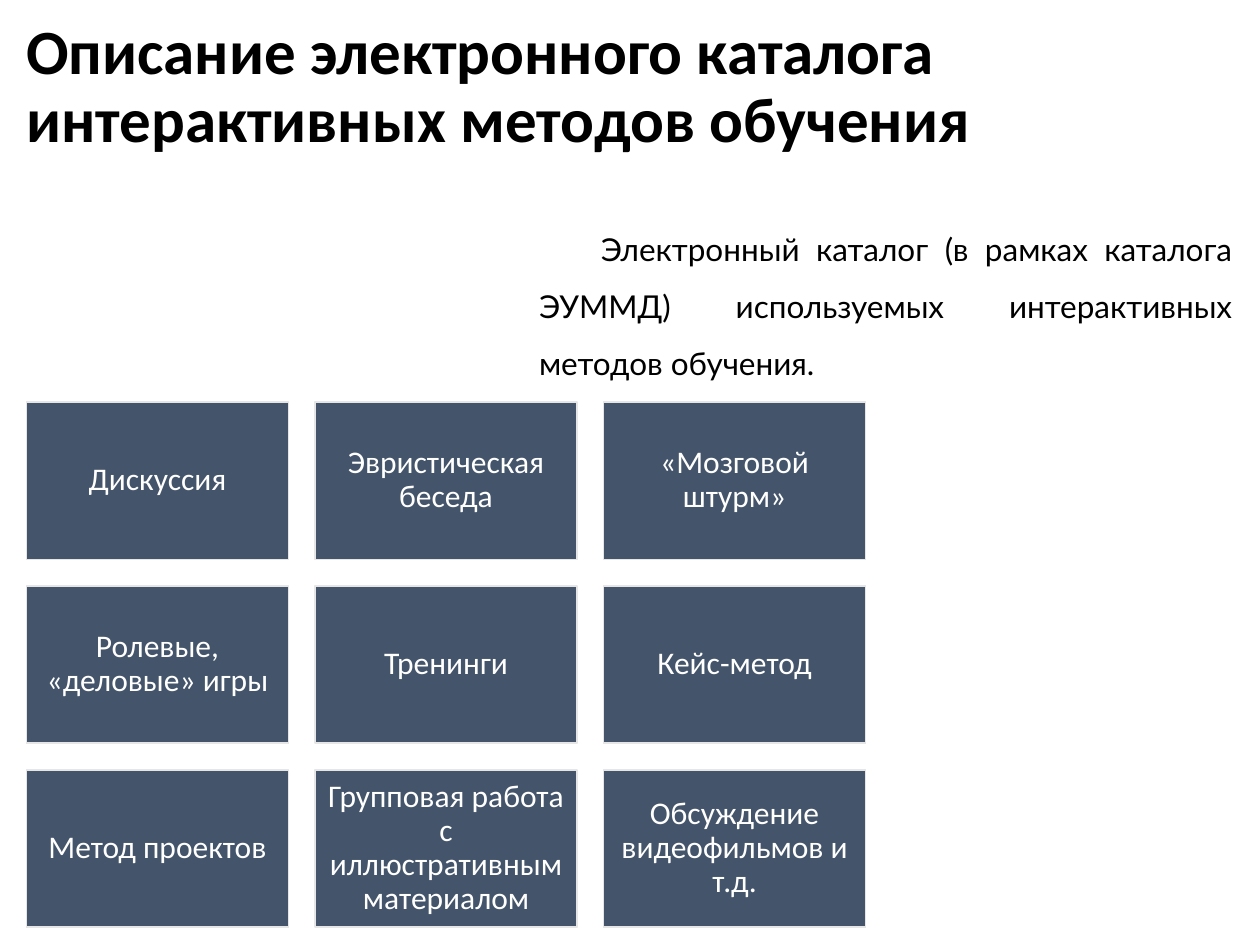
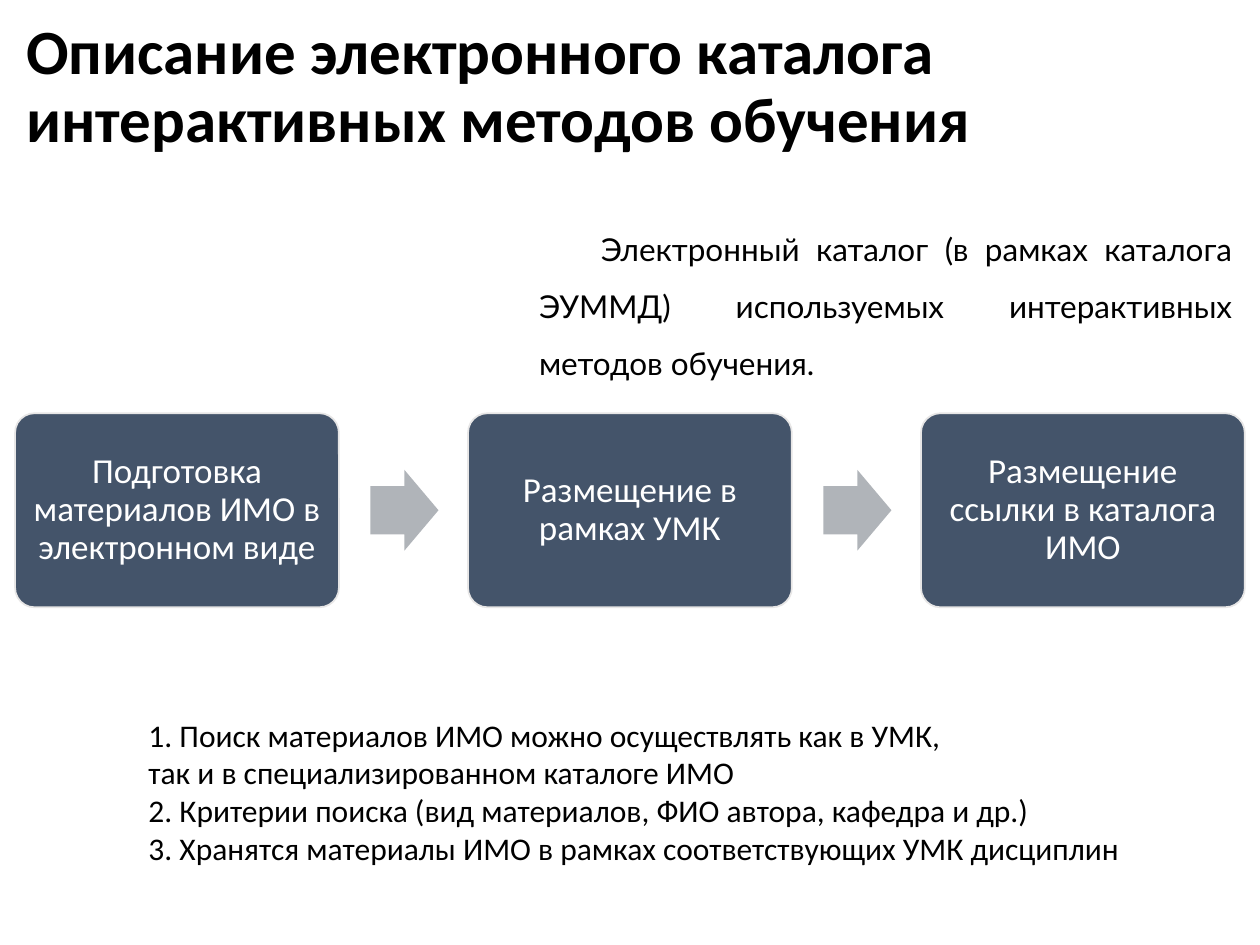
import pptx
import pptx.dml.color
import pptx.enum.shapes
import pptx.enum.text
import pptx.util

RGBColor = pptx.dml.color.RGBColor
Shape = pptx.enum.shapes.MSO_SHAPE
Align = pptx.enum.text.PP_ALIGN
Anchor = pptx.enum.text.MSO_ANCHOR

BLACK = RGBColor(0x00, 0x00, 0x00)
WHITE = RGBColor(0xFF, 0xFF, 0xFF)
SLATE = RGBColor(0x44, 0x54, 0x6A)
PALE_GREY = RGBColor(0xE7, 0xE6, 0xE6)
ARROW_GREY = RGBColor(0xB0, 0xB4, 0xB9)

SLIDE_WIDTH = pptx.util.Inches(10)
SLIDE_HEIGHT = pptx.util.Inches(7.5)
COLUMNS = 100  # the slide is 100 columns by 75 rows of square cells

TITLE = "Описание электронного каталога интерактивных методов обучения"
INTRO = ("Электронный каталог (в рамках каталога ЭУММД) используемых "
         "интерактивных методов обучения.")
METHODS = [
    ["Дискуссия", "Эвристическая беседа", "«Мозговой штурм»"],
    ["Ролевые, «деловые» игры", "Тренинги", "Кейс-метод"],
    ["Метод проектов", "Групповая работа с иллюстративным материалом",
     "Обсуждение видеофильмов и т.д."],
]
STEPS = ["Подготовка материалов ИМО в электронном виде",
         "Размещение в рамках УМК",
         "Размещение ссылки в каталога ИМО"]
NOTES = ["1. Поиск материалов ИМО можно осуществлять как в УМК,",
         "так и в специализированном каталоге ИМО",
         "2. Критерии поиска (вид материалов, ФИО автора, кафедра и др.)",
         "3. Хранятся материалы ИМО в рамках соответствующих УМК дисциплин"]


def cells(count):
    return pptx.util.Emu(round(SLIDE_WIDTH * count / COLUMNS))


def write(box, lines, size, color=BLACK, font="Calibri", bold=False,
          align=Align.LEFT, spacing=1.0):
    frame = box.text_frame
    frame.word_wrap = True
    frame.text = "\n".join(lines)
    for para in frame.paragraphs:
        para.alignment = align
        para.line_spacing = spacing
        for span in para.runs:
            span.font.name = font
            span.font.size = pptx.util.Pt(size)
            span.font.bold = bold
            span.font.color.rgb = color
    return frame


def add_text(slide, place, lines, size, **style):
    box = slide.shapes.add_textbox(*map(cells, place))
    return write(box, lines, size, **style)


def add_solid(slide, kind, place, fill, adjustments=()):
    shape = slide.shapes.add_shape(kind, *map(cells, place))
    shape.shadow.inherit = False
    shape.fill.solid()
    shape.fill.fore_color.rgb = fill
    shape.line.fill.background()
    for index, value in enumerate(adjustments):
        shape.adjustments[index] = value
    return shape


def add_card(slide, kind, place, label, size, margin, adjustments=()):
    card = add_solid(slide, kind, place, SLATE, adjustments)
    card.line.color.rgb = PALE_GREY
    card.line.width = pptx.util.Pt(1)
    frame = write(card, [label], size, color=WHITE, align=Align.CENTER,
                  spacing=0.9)
    frame.vertical_anchor = Anchor.MIDDLE
    frame.margin_left = frame.margin_right = cells(margin)
    frame.margin_top = frame.margin_bottom = cells(margin)


def add_catalogue_slide(deck):
    """Add a slide with the title and introduction that all slides share."""
    slide = deck.slides.add_slide(deck.slide_layouts[6])
    title = add_text(slide, (1.1, 1.1, 85.3, 11.8), [TITLE], 36, bold=True,
                     spacing=0.9)
    title.vertical_anchor = Anchor.MIDDLE
    intro = add_text(slide, (41.8, 16.3, 57, 14.6), [INTRO], 18, font="Lato",
                     align=Align.JUSTIFY, spacing=1.5)
    properties = intro.paragraphs[0]._p.get_or_add_pPr()
    properties.set("indent", str(cells(4.9)))
    return slide


def add_method_grid(slide):
    left, top, width, height, gap = 2.1, 31.9, 20.8, 12.5, 2.1
    for row, labels in enumerate(METHODS):
        for column, label in enumerate(labels):
            place = (left + column * (width + gap),
                     top + row * (height + gap), width, height)
            add_card(slide, Shape.RECTANGLE, place, label, 18, 0.7)


def add_step_chain(slide):
    left, top, width, height, pitch = 1.2, 32.8, 25.7, 15.4, 35.95
    arrow_width, arrow_height = 5.4, 6.4
    arrow_offset = 28.2
    for index, label in enumerate(STEPS):
        start = left + index * pitch
        add_card(slide, Shape.ROUNDED_RECTANGLE, (start, top, width, height),
                 label, 20, 0.8, [0.1])
        if index < len(STEPS) - 1:
            place = (start + arrow_offset, top + (height - arrow_height) / 2,
                     arrow_width, arrow_height)
            add_solid(slide, Shape.RIGHT_ARROW, place, ARROW_GREY, [0.6, 0.5])


def main():
    deck = pptx.Presentation()
    deck.slide_width = SLIDE_WIDTH
    deck.slide_height = SLIDE_HEIGHT
    add_method_grid(add_catalogue_slide(deck))
    search_slide = add_catalogue_slide(deck)
    add_step_chain(search_slide)
    add_text(search_slide, (10.8, 56.3, 80.2, 13.1), NOTES, 18)
    deck.save("out.pptx")


if __name__ == "__main__":
    main()
